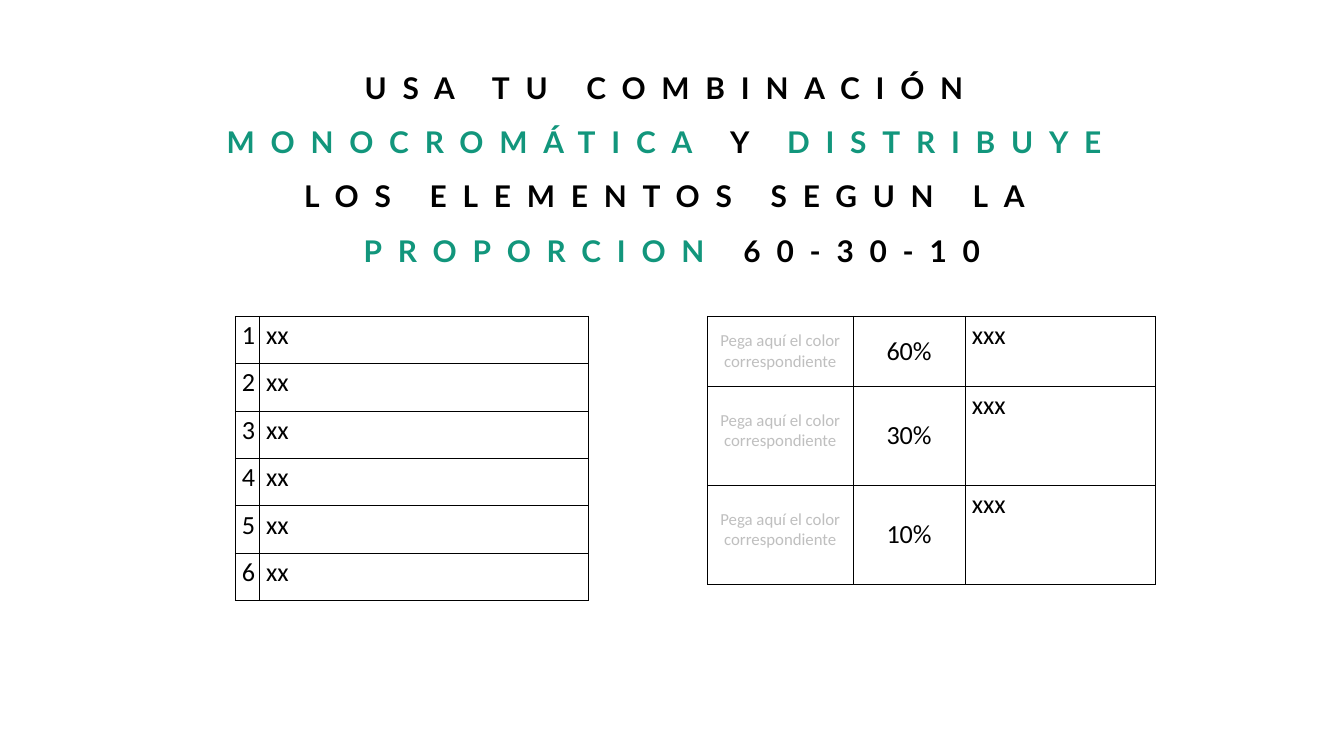
from lxml import etree
from pptx import Presentation
from pptx.dml.color import RGBColor
from pptx.enum.text import MSO_ANCHOR, PP_ALIGN
from pptx.oxml.ns import qn
from pptx.util import Pt

BLACK = RGBColor(0x00, 0x00, 0x00)
GREEN = RGBColor(0x12, 0x96, 0x7C)
GREY = RGBColor(0xBF, 0xBF, 0xBF)
CENTER, LEFT = PP_ALIGN.CENTER, PP_ALIGN.LEFT
TOP, MIDDLE = MSO_ANCHOR.TOP, MSO_ANCHOR.MIDDLE

TITLE = [
    ("USA TU COMBINACIÓN ", BLACK),
    ("MONOCROMÁTICA", GREEN),
    (" Y ", BLACK),
    ("DISTRIBUYE", GREEN),
    (" LOS ELEMENTOS SEGUN LA ", BLACK),
    ("PROPORCION", GREEN),
    (" 60-30-10", BLACK),
]
PROMPT = "Pega aquí el color correspondiente"


def add_title(s, x, y, w, h):
    tf = s.shapes.add_textbox(Pt(x), Pt(y), Pt(w), Pt(h)).text_frame
    tf.word_wrap = True
    tf.margin_left = tf.margin_right = tf.margin_top = tf.margin_bottom = 0
    p = tf.paragraphs[0]
    p.alignment = CENTER
    p.line_spacing = Pt(57.9)
    for text, color in TITLE:
        r = p.add_run()
        r.text = text
        r.font.name, r.font.size, r.font.bold = "Lato", Pt(32), True
        r.font.color.rgb = color
        r.font._element.set("spc", "1690")


def set_borders(cell):
    tc_pr = cell._tc.get_or_add_tcPr()
    for i, side in enumerate(("a:lnL", "a:lnR", "a:lnT", "a:lnB")):
        ln = etree.Element(qn(side), w=str(Pt(1)))
        fill = etree.SubElement(ln, qn("a:solidFill"))
        etree.SubElement(fill, qn("a:srgbClr"), val=str(BLACK))
        tc_pr.insert(i, ln)


def fill_cell(cell, text, size=28, color=BLACK, align=LEFT, anchor=TOP):
    cell.text = text
    cell.fill.background()
    cell.vertical_anchor = anchor
    p = cell.text_frame.paragraphs[0]
    p.alignment = align
    p.font.name, p.font.size, p.font.bold = "Calibri", Pt(size), False
    p.font.color.rgb = color
    set_borders(cell)


def add_grid(s, x, y, widths, heights):
    table = s.shapes.add_table(len(heights), len(widths), Pt(x), Pt(y),
                               Pt(sum(widths)), Pt(sum(heights))).table
    table.first_row = table.horz_banding = False
    for column, width in zip(table.columns, widths):
        column.width = Pt(width)
    for row, height in zip(table.rows, heights):
        row.height = Pt(height)
    return table


def add_element_table(s, x, y, w, h, count=6):
    number_w = 26
    table = add_grid(s, x, y, [number_w, w - number_w], [h / count] * count)
    for i in range(count):
        fill_cell(table.cell(i, 0), str(i + 1))
        fill_cell(table.cell(i, 1), "xx")


def add_proportion_table(s, x, y, w, h):
    color_w, share_w, first_h = 156, 120, 75
    other_h = (h - first_h) / 2
    table = add_grid(s, x, y, [color_w, share_w, w - color_w - share_w],
                     [first_h, other_h, other_h])
    for i, share in enumerate(("60%", "30%", "10%")):
        prompt = table.cell(i, 0)
        fill_cell(prompt, PROMPT, 18, GREY, CENTER, TOP if i else MIDDLE)
        if i:  # taller rows start the prompt one line down
            prompt.margin_top = Pt(25.6)
        fill_cell(table.cell(i, 1), share, align=CENTER, anchor=MIDDLE)
        fill_cell(table.cell(i, 2), "xxx")


def main():
    prs = Presentation()
    prs.slide_width, prs.slide_height = Pt(1440), Pt(810)
    s = prs.slides.add_slide(prs.slide_layouts[6])

    # Heading
    add_title(s, 237, 55.5, 966, 227)
    # Numbered elements on the left, colour shares on the right
    add_element_table(s, 252, 339, 378, 304.5)
    add_proportion_table(s, 758, 339, 480, 287)

    prs.save("out.pptx")


if __name__ == "__main__":
    main()
